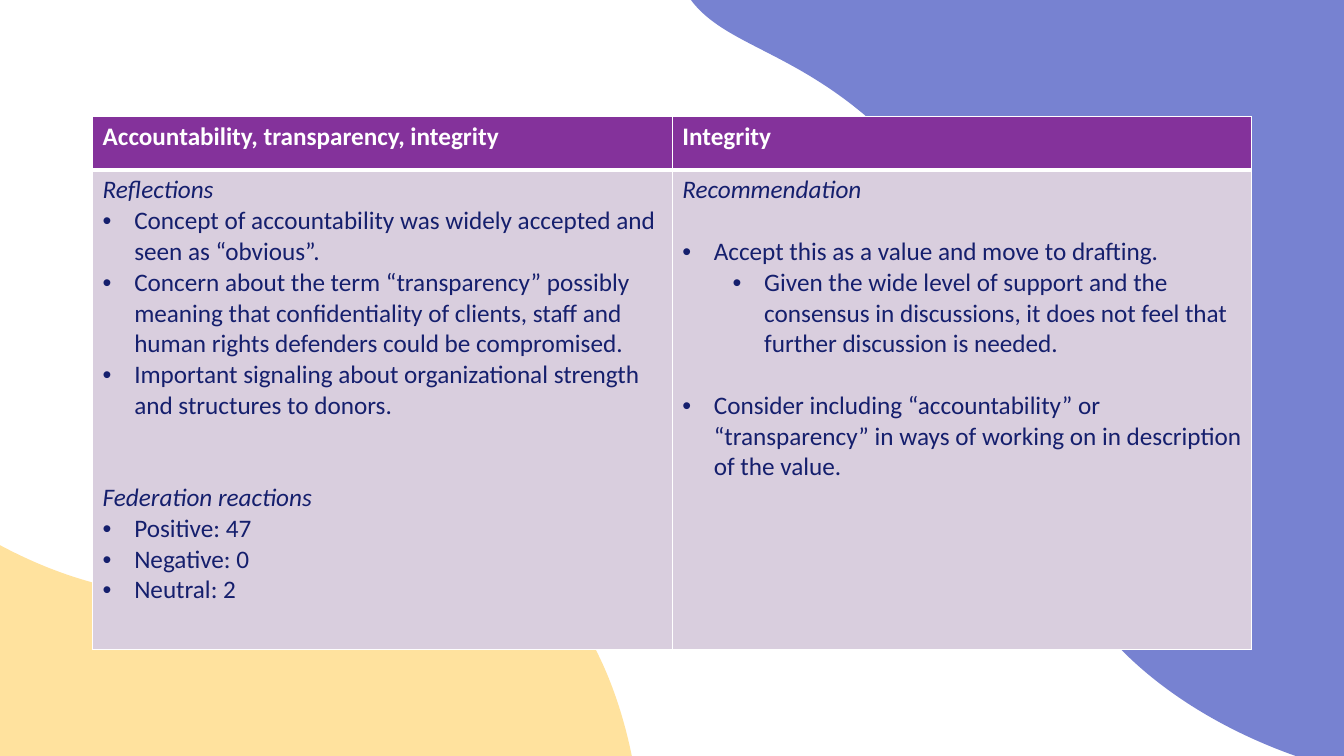
import math

from lxml import etree
from pptx import Presentation
from pptx import util as u
from pptx.dml.color import RGBColor
from pptx.oxml import ns

Pt = u.Pt
WHITE = RGBColor(0xFF, 0xFF, 0xFF)
NAVY = RGBColor(0x15, 0x1F, 0x6D)
PURPLE = RGBColor(0x84, 0x32, 0x9B)
LILAC = RGBColor(0xD9, 0xCE, 0xDE)
YELLOW = RGBColor(0xFF, 0xE2, 0x9E)
BLUE = RGBColor(0x77, 0x82, 0xD1)

HEADING, POINT, SUBPOINT = "heading", "point", "subpoint"
INDENTS = {POINT: 22.5, SUBPOINT: 58.5}
LINE = 22

YELLOW_FRAME = (-602, 275, 1060.5, 592)
YELLOW_WAVE = [
    (371, 402), (476, 462), (500, 737), (371, 832),
    (269, 906), (108, 843), (78, 832),
    (-27, 791), (-21, 746), (-98, 728),
    (-243, 695), (-321, 841), (-444, 808),
    (-534, 783), (-600, 673), (-602, 580),
    (-603, 414), (-403, 271), (-244, 275),
    (-86, 279), (-42, 426), (149, 427),
    (271, 428), (312, 369), (371, 402),
]
BLUE_FRAME = (391.7, -116.6, 976.3, 545)
BLUE_WAVE = [
    (482, -24), (454, -131), (618, -325), (764, -302),
    (878, -283), (942, -137), (953, -109),
    (994, -15), (961, 10), (999, 73),
    (1072, 189), (1218, 145), (1275, 247),
    (1318, 322), (1289, 436), (1228, 498),
    (1121, 606), (899, 567), (798, 461),
    (698, 355), (765, 232), (642, 105),
    (564, 24), (499, 37), (482, -24),
]

HEADERS = ["Accountability, transparency, integrity", "Integrity"]
REFLECTIONS = [
    (HEADING, "Reflections", 0),
    (POINT, "Concept of accountability was widely accepted and seen as “obvious”.", 0),
    (POINT, "Concern about the term “transparency” possibly meaning that "
            "confidentiality of clients, staff and human rights defenders "
            "could be compromised.", 0),
    (POINT, "Important signaling about organizational strength and structures to donors.", 0),
    (HEADING, "Federation reactions", 2 * LINE),
    (POINT, "Positive: 47", 0),
    (POINT, "Negative: 0", 0),
    (POINT, "Neutral: 2", 0),
]
RECOMMENDATION = [
    (HEADING, "Recommendation", 0),
    (POINT, "Accept this as a value and move to drafting.", LINE),
    (SUBPOINT, "Given the wide level of support and the consensus in discussions, "
               "it does not feel that further discussion is needed.", 0),
    (POINT, "Consider including “accountability” or “transparency” in ways of "
            "working on in description of the value.", LINE),
]


def turn_back(points, frame, degrees):
    left, top, width, height = frame
    center = complex(left + width / 2, top + height / 2)
    angle = math.radians(-degrees)
    turn = complex(math.cos(angle), math.sin(angle))
    turned = [center + (complex(x, y) - center) * turn for x, y in points]
    return [(Pt(point.real), Pt(point.imag)) for point in turned]


class SlideWriter:
    font_name = "Calibri"
    font_size = Pt(18)

    def __init__(self, slide):
        self.slide = slide

    def wave(self, points, frame, color, rotation=0):
        start, *rest = turn_back(points, frame, rotation)
        builder = self.slide.shapes.build_freeform(*start)
        builder.add_line_segments(rest, close=True)
        wave = builder.convert_to_shape()
        left, top, width, height = map(Pt, frame)
        outline = wave._element.find(".//" + ns.qn("a:path"))
        outline.set("w", str(width))
        outline.set("h", str(height))
        for point in outline.iter(ns.qn("a:pt")):
            point.set("x", str(int(point.get("x")) + wave.left - left))
            point.set("y", str(int(point.get("y")) + wave.top - top))
        segments = outline.findall(ns.qn("a:lnTo"))
        for i in range(0, len(points) - 1, 3):
            curve = etree.Element(ns.qn("a:cubicBezTo"))
            segments[i].addprevious(curve)
            for segment in segments[i:i + 3]:
                curve.append(segment[0])
                outline.remove(segment)
        wave.left, wave.top, wave.width, wave.height = left, top, width, height
        wave.rotation = rotation
        wave.shadow.inherit = False
        wave.fill.solid()
        wave.fill.fore_color.rgb = color
        wave.line.fill.background()

    def table(self, left, top, column_widths, row_heights):
        frame = self.slide.shapes.add_table(
            len(row_heights), len(column_widths), Pt(left), Pt(top),
            Pt(sum(column_widths)), Pt(sum(row_heights)))
        for column, width in zip(frame.table.columns, column_widths):
            column.width = Pt(width)
        for row, height in zip(frame.table.rows, row_heights):
            row.height = Pt(height)
        return frame.table

    def cell(self, cell, color, bottom=1):
        properties = cell._tc.get_or_add_tcPr()
        for side, width in zip("LRTB", (1, 1, 1, bottom)):
            border = etree.SubElement(properties, ns.qn(f"a:ln{side}"), w=str(Pt(width)))
            fill = etree.SubElement(border, ns.qn("a:solidFill"))
            etree.SubElement(fill, ns.qn("a:srgbClr"), val=str(WHITE))
        cell.fill.solid()
        cell.fill.fore_color.rgb = color

    def paragraph(self, paragraph, content, color, bold=False, italic=False,
                  kind=HEADING, before=0):
        paragraph.text = content
        if before:
            paragraph.space_before = Pt(before)
        if kind in INDENTS:
            paragraph.level = int(kind == SUBPOINT)
            properties = paragraph._p.get_or_add_pPr()
            properties.set("marL", str(Pt(INDENTS[kind])))
            properties.set("indent", str(-Pt(INDENTS[POINT])))
            etree.SubElement(properties, ns.qn("a:buFont"), typeface="Arial")
            etree.SubElement(properties, ns.qn("a:buChar"), char="•")
        font = paragraph.font
        font.name, font.size = self.font_name, self.font_size
        font.bold, font.italic = bold, italic
        font.color.rgb = color

    def header(self, cell, title):
        self.cell(cell, PURPLE, bottom=3)
        self.paragraph(cell.text_frame.paragraphs[0], title, WHITE, bold=True)

    def body(self, cell, items):
        self.cell(cell, LILAC)
        frame = cell.text_frame
        for i, (kind, content, before) in enumerate(items):
            paragraph = frame.add_paragraph() if i else frame.paragraphs[0]
            self.paragraph(paragraph, content, NAVY, italic=kind == HEADING,
                           kind=kind, before=before)


def main():
    deck = Presentation()
    deck.slide_width, deck.slide_height = Pt(960), Pt(540)
    writer = SlideWriter(deck.slides.add_slide(deck.slide_layouts[6]))
    writer.wave(YELLOW_WAVE, YELLOW_FRAME, YELLOW)
    writer.wave(BLUE_WAVE, BLUE_FRAME, BLUE, rotation=225.3)
    values = writer.table(66.2, 83.2, [414, 414], [38.2, 342.7])
    for column, (title, items) in enumerate(zip(HEADERS, [REFLECTIONS, RECOMMENDATION])):
        writer.header(values.cell(0, column), title)
        writer.body(values.cell(1, column), items)
    deck.save("out.pptx")


if __name__ == "__main__":
    main()
